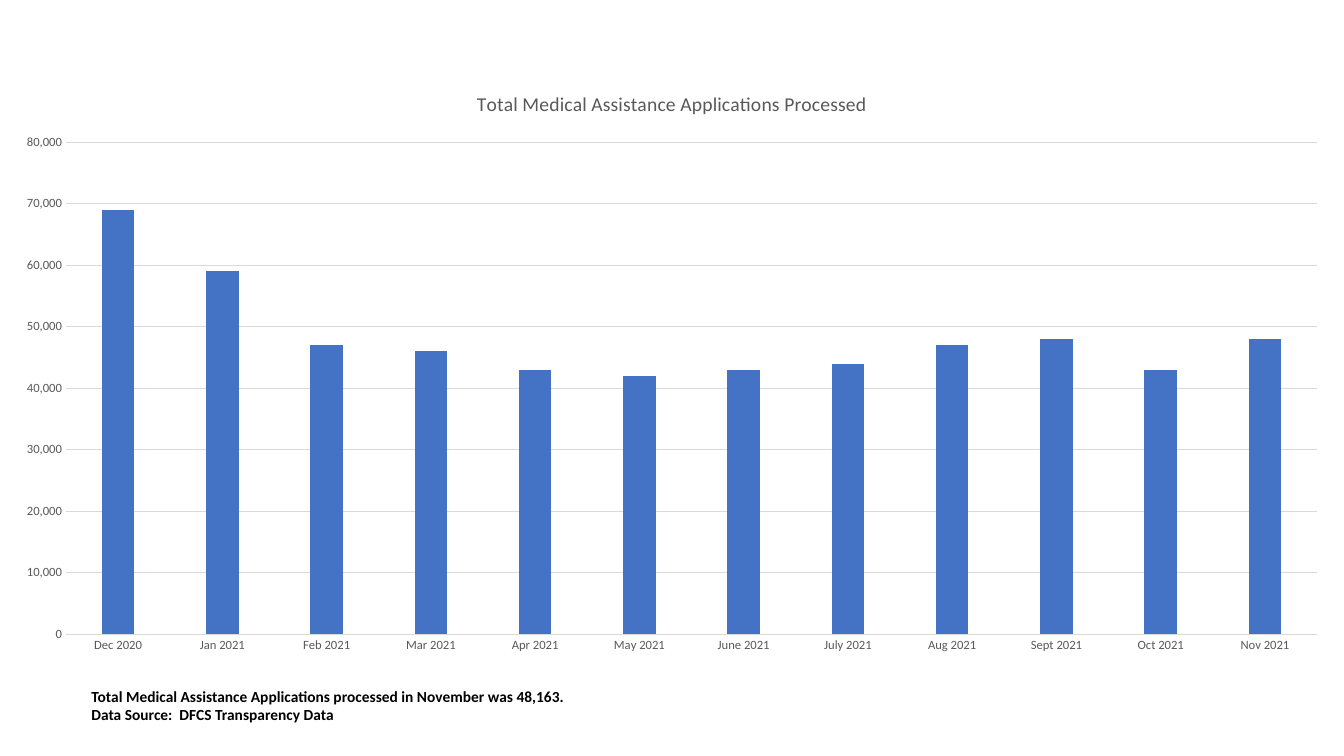
from pptx import Presentation
from pptx.chart.data import CategoryChartData
from pptx.dml.color import RGBColor
from pptx.enum.chart import XL_CHART_TYPE, XL_TICK_MARK
from pptx.enum.text import MSO_AUTO_SIZE
from pptx.util import Inches, Pt

COLUMNS = XL_CHART_TYPE.COLUMN_CLUSTERED
NO_TICK = XL_TICK_MARK.NONE
FIT_SHAPE = MSO_AUTO_SIZE.SHAPE_TO_FIT_TEXT

BLACK = RGBColor(0x00, 0x00, 0x00)
GRAY = RGBColor(0x59, 0x59, 0x59)
PALE = RGBColor(0xD9, 0xD9, 0xD9)
BLUE = RGBColor(0x44, 0x72, 0xC4)

WIDTH, HEIGHT = Inches(13.33), Inches(7.5)
CHART_BOX = (0, 9.25, 100, 78.67)
NOTE_BOX = (6.06, 90.2, 93.94, 6.25)

BASE_FORMAT = {"name": "Calibri", "size": Pt(10), "bold": False}
TITLE_FORMAT = {**BASE_FORMAT, "size": Pt(14)}
AXIS_FORMAT = {**BASE_FORMAT, "size": Pt(9)}
NOTE_FORMAT = {**BASE_FORMAT, "size": Pt(11), "bold": True}

TITLE = "Total Medical Assistance Applications Processed"
PROCESSED = {
    "Dec 2020": 69000, "Jan 2021": 59000, "Feb 2021": 47000,
    "Mar 2021": 46000, "Apr 2021": 43000, "May 2021": 42000,
    "June 2021": 43000, "July 2021": 44000, "Aug 2021": 47000,
    "Sept 2021": 48000, "Oct 2021": 43000, "Nov 2021": 48000,
}
NOTES = (
    "Total Medical Assistance Applications processed in November was 48,163.",
    "Data Source:  DFCS Transparency Data",
)


def place(box):
    """Turn percentages of the slide into left, top, width and height."""
    return [int(share * side / 100) for share, side in zip(box, (WIDTH, HEIGHT) * 2)]


def set_font(font, values, color):
    """Apply a dict of format values and a colour to a font."""
    for name, value in values.items():
        setattr(font, name, value)
    font.color.rgb = color


def set_line(line, color):
    """Give a chart line its colour and thin width."""
    line.color.rgb = color
    line.width = Pt(0.75)


def style_axes(chart):
    """Style the month axis and the count axis."""
    months, counts = chart.category_axis, chart.value_axis
    for axis in (months, counts):
        axis.major_tick_mark = axis.minor_tick_mark = NO_TICK
        set_font(axis.tick_labels.font, AXIS_FORMAT, GRAY)
    set_line(months.format.line, PALE)
    counts.format.line.fill.background()
    set_line(counts.major_gridlines.format.line, PALE)
    counts.minimum_scale, counts.maximum_scale = 0, 80000
    counts.major_unit = 10000
    counts.tick_labels.number_format = "#,##0"
    counts.tick_labels.number_format_is_linked = False


def add_monthly_chart(page, box):
    """Draw the column chart of applications processed each month."""
    data = CategoryChartData(number_format="#,##0")
    data.categories = list(PROCESSED)
    data.add_series(TITLE, list(PROCESSED.values()))
    chart = page.shapes.add_chart(COLUMNS, *place(box), data).chart
    set_font(chart.font, BASE_FORMAT, BLACK)
    chart.has_legend = False
    chart.has_title = True
    chart.chart_title.include_in_layout = False
    para = chart.chart_title.text_frame.paragraphs[0]
    span = para.add_run()
    span.text = TITLE
    set_font(span.font, TITLE_FORMAT, GRAY)
    style_axes(chart)
    plot = chart.plots[0]
    plot.gap_width, plot.overlap, plot.vary_by_categories = 219, -27, False
    fill = plot.series[0].format.fill
    fill.solid()
    fill.fore_color.rgb = BLUE


def add_notes(page, box):
    """Write the summary and the data source below the chart."""
    frame = page.shapes.add_textbox(*place(box)).text_frame
    frame.word_wrap = True
    frame.auto_size = FIT_SHAPE
    for index, note in enumerate(NOTES):
        para = frame.add_paragraph() if index else frame.paragraphs[0]
        span = para.add_run()
        span.text = note
        set_font(span.font, NOTE_FORMAT, BLACK)


def main():
    """Build the slide and save the deck."""
    deck = Presentation()
    deck.slide_width, deck.slide_height = WIDTH, HEIGHT
    page = deck.slides.add_slide(deck.slide_layouts[6])
    add_notes(page, NOTE_BOX)
    add_monthly_chart(page, CHART_BOX)
    deck.save("out.pptx")


if __name__ == "__main__":
    main()
